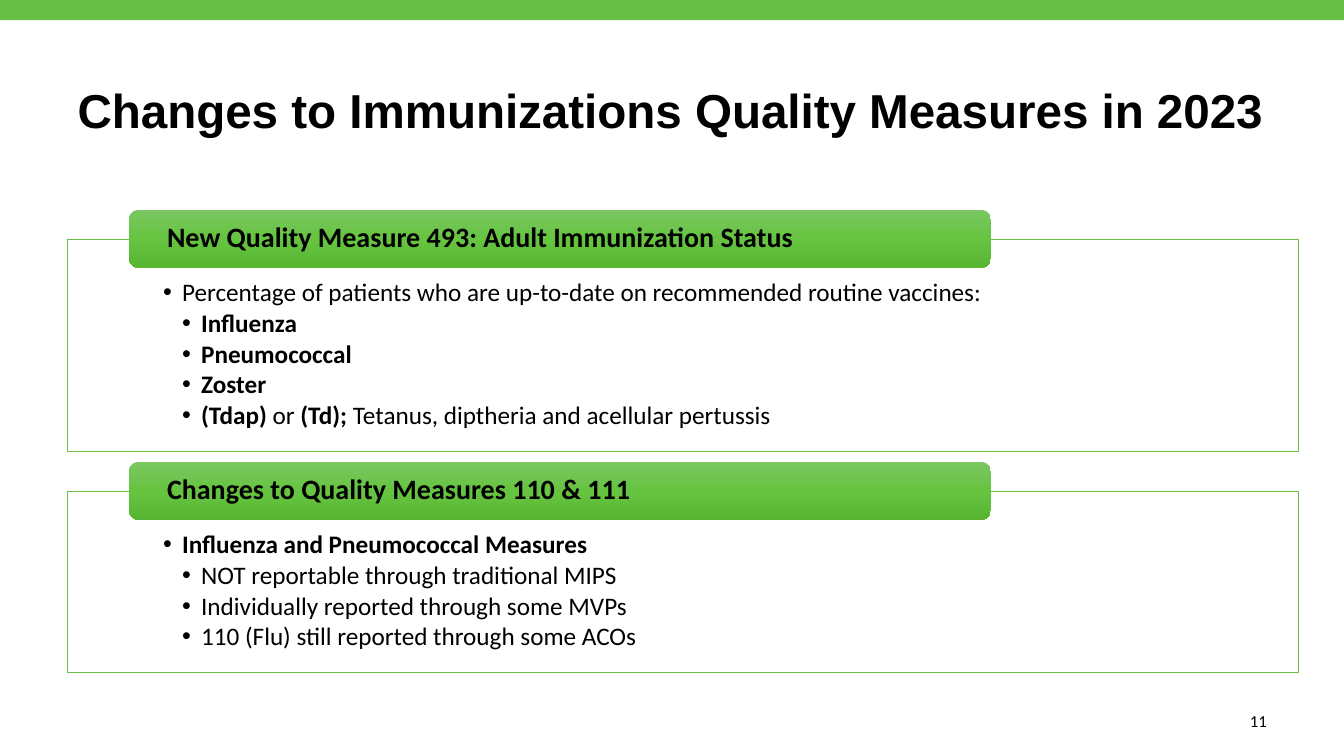
"""Build the slide on changes to immunizations quality measures."""
from copy import deepcopy

from lxml.etree import SubElement
from pptx import Presentation
from pptx.dml.color import RGBColor
from pptx.enum.shapes import MSO_SHAPE
from pptx.enum.text import MSO_ANCHOR, PP_ALIGN
from pptx.oxml.ns import qn
from pptx.util import Cm, Pt

GREEN = RGBColor(0x69, 0xBE, 0x46)
HEADING_STOPS = (
    (0, RGBColor(0x7B, 0xC6, 0x62)),
    (0.5, RGBColor(0x66, 0xC4, 0x40)),
    (1, RGBColor(0x58, 0xB5, 0x32)),
)
BLACK = RGBColor(0, 0, 0)
WHITE = RGBColor(0xFF, 0xFF, 0xFF)

SECTIONS = [
    ("New Quality Measure 493: Adult Immunization Status", 5.36, [
        (0, [("Percentage of patients who are up-to-date on recommended routine vaccines:", False)]),
        (1, [("Influenza", True)]),
        (1, [("Pneumococcal", True)]),
        (1, [("Zoster", True)]),
        (1, [("(Tdap)", True), (" or ", False), ("(Td); ", True),
             ("Tetanus, diptheria and acellular pertussis", False)]),
    ]),
    ("Changes to Quality Measures 110 & 111", 4.57, [
        (0, [("Influenza and Pneumococcal Measures", True)]),
        (1, [("NOT reportable through traditional MIPS", False)]),
        (1, [("Individually reported through some MVPs", False)]),
        (1, [("110 (Flu) still reported through some ACOs", False)]),
    ]),
]
FIRST_PANEL_TOP = 6.02
PANEL_GAP = 0.99
HEADING_HEIGHT = 1.47


class MeasuresSlide:
    """Hold the style and the current slide, with a method per kind of element."""

    def __init__(self, presentation):
        self.slide = presentation.slides.add_slide(presentation.slide_layouts[5])
        self.body_font = "Calibri"
        self.title_font = "Arial"

    def style(self, run, size, bold=False, name=None):
        run.font.name = name or self.body_font
        run.font.size = Pt(size)
        run.font.bold = bold
        run.font.color.rgb = BLACK

    def block(self, kind, left, top, width, height):
        block = self.slide.shapes.add_shape(kind, Cm(left), Cm(top), Cm(width), Cm(height))
        block.shadow.inherit = False
        block.line.fill.background()
        return block

    def band(self):
        band = self.block(MSO_SHAPE.RECTANGLE, 0, 0, 33.87, 0.51)
        band.fill.solid()
        band.fill.fore_color.rgb = GREEN

    def title(self, text):
        title = self.slide.shapes.title
        title.left, title.top, title.width, title.height = Cm(1.7), Cm(1.02), Cm(30.5), Cm(3.68)
        frame = title.text_frame
        frame.text = text
        frame.word_wrap = True
        frame.vertical_anchor = MSO_ANCHOR.MIDDLE
        paragraph = frame.paragraphs[0]
        paragraph.alignment = PP_ALIGN.LEFT
        paragraph.line_spacing = 0.9
        self.style(paragraph.runs[0], 34, True, self.title_font)

    def panel(self, top, height, points):
        panel = self.block(MSO_SHAPE.RECTANGLE, 1.7, top, 31.01, height)
        panel.fill.solid()
        panel.fill.fore_color.rgb = WHITE
        white = panel.fill._xPr.find(".//" + qn("a:srgbClr"))
        SubElement(white, qn("a:alpha"), val="90000")
        panel.line.color.rgb = GREEN
        panel.line.width = Pt(0.5)
        frame = panel.text_frame
        frame.word_wrap = True
        frame.vertical_anchor = MSO_ANCHOR.TOP
        frame.margin_left = frame.margin_right = Cm(2.41)
        frame.margin_top, frame.margin_bottom = Cm(1.04), Cm(0.36)
        for index, (level, pieces) in enumerate(points):
            paragraph = frame.add_paragraph() if index else frame.paragraphs[0]
            self.point(paragraph, level, pieces)

    def point(self, paragraph, level, pieces):
        indent = Cm(0.48)
        properties = paragraph._p.get_or_add_pPr()
        properties.set("marL", str(indent * (level + 1)))
        properties.set("indent", str(-indent))
        SubElement(properties, qn("a:buFont"), typeface="Arial")
        SubElement(properties, qn("a:buChar"), char="•")
        paragraph.level = level
        paragraph.alignment = PP_ALIGN.LEFT
        paragraph.line_spacing = 0.9
        paragraph.space_after = Pt(2.4)
        for text, bold in pieces:
            run = paragraph.add_run()
            run.text = text
            self.style(run, 18, bold)

    def heading(self, top, text):
        heading = self.block(MSO_SHAPE.ROUNDED_RECTANGLE, 3.25, top, 21.72, HEADING_HEIGHT)
        heading.fill.gradient()
        heading.fill.gradient_angle = 270
        stop_list = heading.fill._xPr.find(".//" + qn("a:gsLst"))
        stop_list.insert(1, deepcopy(stop_list[0]))
        for stop, (position, color) in zip(heading.fill.gradient_stops, HEADING_STOPS):
            stop.position = position
            stop.color.rgb = color
        frame = heading.text_frame
        frame.text = text
        frame.word_wrap = True
        frame.vertical_anchor = MSO_ANCHOR.MIDDLE
        frame.margin_left = frame.margin_right = Cm(0.89)
        frame.margin_top = frame.margin_bottom = 0
        paragraph = frame.paragraphs[0]
        paragraph.alignment = PP_ALIGN.LEFT
        paragraph.line_spacing = 0.9
        self.style(paragraph.runs[0], 20, True)

    def page_number(self, text):
        number = self.slide.shapes.add_textbox(Cm(24.51), Cm(17.65), Cm(7.67), Cm(1.02))
        frame = number.text_frame
        frame.text = text
        frame.word_wrap = True
        frame.vertical_anchor = MSO_ANCHOR.MIDDLE
        frame.paragraphs[0].alignment = PP_ALIGN.RIGHT
        self.style(frame.paragraphs[0].runs[0], 12)


def main():
    presentation = Presentation()
    presentation.slide_width, presentation.slide_height = Cm(33.87), Cm(19.05)
    measures = MeasuresSlide(presentation)
    measures.band()
    measures.title("Changes to Immunizations Quality Measures in 2023")
    top = FIRST_PANEL_TOP
    for heading, height, points in SECTIONS:
        measures.panel(top, height, points)
        measures.heading(top - HEADING_HEIGHT / 2, heading)
        top += height + PANEL_GAP
    measures.page_number("11")
    presentation.save("out.pptx")


if __name__ == "__main__":
    main()
